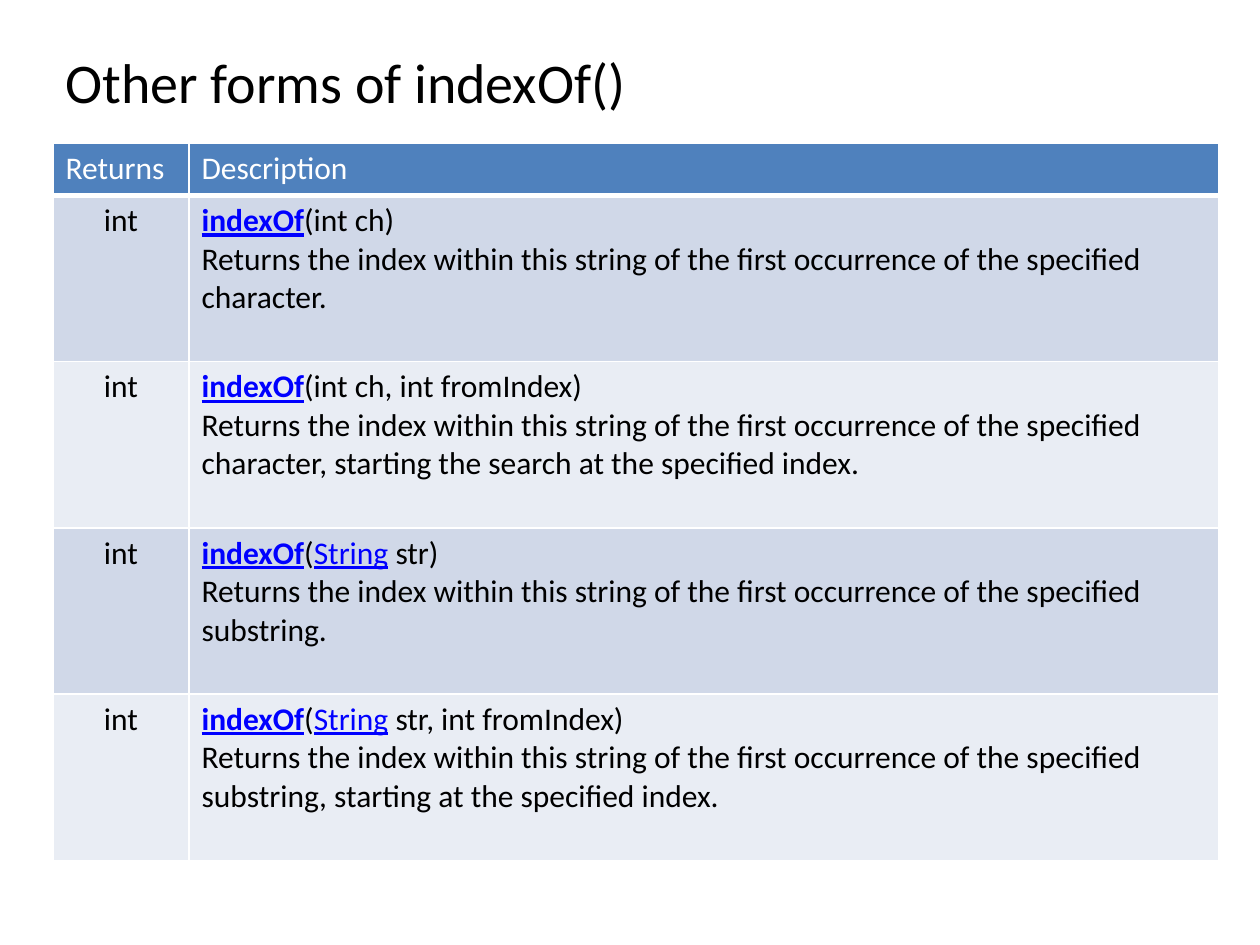
import pptx
import pptx.util
import pptx.dml.color
import pptx.enum.text
import pptx.oxml.ns
from lxml import etree

Inches = pptx.util.Inches
ALIGN = pptx.enum.text.PP_ALIGN
ANCHOR = pptx.enum.text.MSO_ANCHOR

COLORS = {
    "white": "FFFFFF",
    "text": "000000",
    "link": "0000FF",
    "header": "4F81BD",
    "odd_row": "D0D8E8",
    "even_row": "E9EDF4",
}

RETURNS_INDEX = "Returns the index within this string of the first occurrence of the specified "

# Each method: parts of its signature (linked words in LINKS), then its description
LINKS = ("indexOf", "String")
METHODS = [
    (["indexOf", "(int ch) "], "character."),
    (["indexOf", "(int ch, int fromIndex) "],
     "character, starting the search at the specified index."),
    (["indexOf", "(", "String", " str) "], "substring."),
    (["indexOf", "(", "String", " str, int fromIndex) "],
     "substring, starting at the specified index."),
]


class SlideBuilder:
    """Holds the style and the current slide."""

    font = "Calibri"
    title_size = 32
    table_size = 18

    def __init__(self, slide):
        self.slide = slide

    def format_run(self, run, size, color, bold=False, underline=False):
        run.font.name = self.font
        run.font.size = pptx.util.Pt(size)
        run.font.color.rgb = pptx.dml.color.RGBColor.from_string(COLORS[color])
        run.font.bold = bold
        run.font.underline = underline

    def title(self, text, left, top, width, height):
        heading = self.slide.shapes.title
        heading.left, heading.top = Inches(left), Inches(top)
        heading.width, heading.height = Inches(width), Inches(height)
        frame = heading.text_frame
        frame.text = text
        frame.word_wrap = True
        frame.vertical_anchor = ANCHOR.TOP
        paragraph = frame.paragraphs[0]
        paragraph.alignment = ALIGN.LEFT
        self.format_run(paragraph.runs[0], self.title_size, "text")

    def table(self, left, top, col_widths, row_heights):
        frame = self.slide.shapes.add_table(
            len(row_heights), len(col_widths), Inches(left), Inches(top),
            Inches(sum(col_widths)), Inches(sum(row_heights)))
        for column, width in zip(frame.table.columns, col_widths):
            column.width = Inches(width)
        for row, height in zip(frame.table.rows, row_heights):
            row.height = Inches(height)
        return frame.table

    def borders(self, cell, bottom=1):
        properties = cell._tc.get_or_add_tcPr()
        widths = {"a:lnL": 1, "a:lnR": 1, "a:lnT": 1, "a:lnB": bottom}
        for position, (tag, points) in enumerate(widths.items()):
            line = etree.Element(pptx.oxml.ns.qn(tag), w=str(pptx.util.Pt(points)))
            fill = etree.SubElement(line, pptx.oxml.ns.qn("a:solidFill"))
            etree.SubElement(fill, pptx.oxml.ns.qn("a:srgbClr"), val=COLORS["white"])
            properties.insert(position, line)

    def cell(self, cell, fill, bottom=1):
        cell.fill.solid()
        cell.fill.fore_color.rgb = pptx.dml.color.RGBColor.from_string(COLORS[fill])
        self.borders(cell, bottom)

    def label(self, cell, text, color, alignment=ALIGN.LEFT):
        cell.text_frame.text = text
        paragraph = cell.text_frame.paragraphs[0]
        paragraph.alignment = alignment
        self.format_run(paragraph.runs[0], self.table_size, color)

    def method_entry(self, cell, signature, description):
        paragraph = cell.text_frame.paragraphs[0]
        for part in signature:
            run = paragraph.add_run()
            run.text = part
            linked = part in LINKS
            self.format_run(run, self.table_size, "link" if linked else "text",
                            bold=part == "indexOf", underline=linked)
        paragraph.add_line_break()
        run = paragraph.add_run()
        run.text = description
        self.format_run(run, self.table_size, "text")


def main():
    presentation = pptx.Presentation()
    presentation.slide_width = Inches(10)
    presentation.slide_height = Inches(7.5)
    title_only = presentation.slide_layouts[5]
    builder = SlideBuilder(presentation.slides.add_slide(title_only))

    # Title
    builder.title("Other forms of indexOf()", 0.42, 0.33, 9, 0.83)

    # Table header
    methods_table = builder.table(0.42, 1.14, [1.08, 8.17],
                                  [0.41] + [1.32] * len(METHODS))
    for column, heading in enumerate(["Returns", "Description"]):
        header = methods_table.cell(0, column)
        builder.cell(header, "header", bottom=3)
        builder.label(header, heading, "white")

    # One banded row per method
    for row, (signature, ending) in enumerate(METHODS, start=1):
        returns, description = methods_table.cell(row, 0), methods_table.cell(row, 1)
        for cell in (returns, description):
            builder.cell(cell, "odd_row" if row % 2 else "even_row")
        builder.label(returns, "int", "text", ALIGN.CENTER)
        builder.method_entry(description, signature, RETURNS_INDEX + ending)

    presentation.save("out.pptx")


if __name__ == "__main__":
    main()
